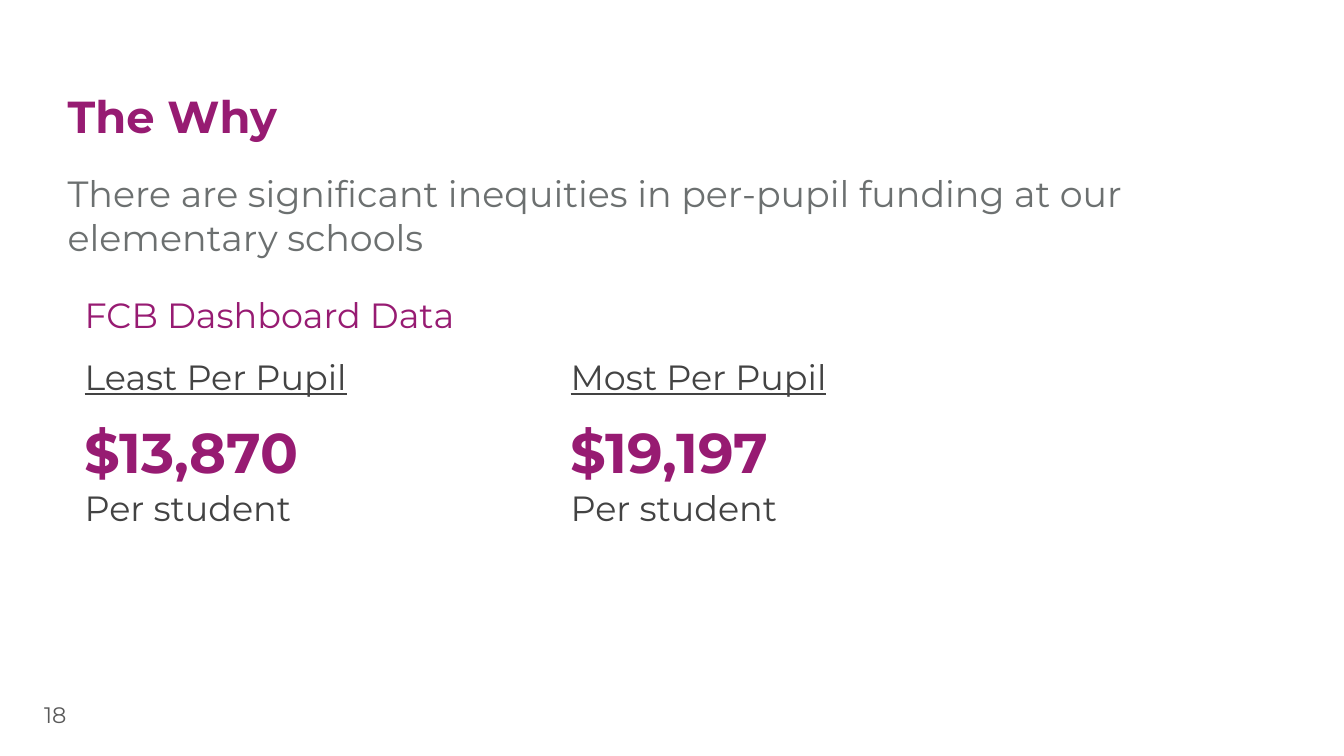
from pptx import Presentation
from pptx import util as u
from pptx.dml import color
from pptx.enum import text
from pptx.oxml import xmlchemy


PLUM = "971B72"
GREY = "6C7070"
CHARCOAL = "434343"
NUMBER_GREY = "595959"


def paint(value):
    return color.RGBColor.from_string(value)


class SlideBuilder:
    font = "Montserrat"
    inset = u.Inches(0.1)

    def __init__(self, deck):
        self.deck = deck
        self.page = deck.slides.add_slide(deck.slide_layouts[1])
        self.page.background.fill.solid()
        self.page.background.fill.fore_color.rgb = paint("FFFFFF")

    def across(self, percent):
        return round(self.deck.slide_width * percent / 100)

    def down(self, percent):
        return round(self.deck.slide_height * percent / 100)

    def area(self, left, top, width, height):
        return self.across(left), self.down(top), self.across(width), self.down(height)

    def add_words(self, para, words, size, tint, bold=False, underline=False):
        para.alignment = text.PP_ALIGN.LEFT
        para.line_spacing = 1.0
        para.space_before = u.Pt(0)
        span = para.add_run()
        span.text = words
        span.font.name = self.font
        span.font.size = u.Pt(size)
        span.font.bold = bold
        span.font.underline = underline
        span.font.color.rgb = paint(tint)

    def frame(self, box, anchor=text.MSO_ANCHOR.TOP):
        frame = box.text_frame
        frame.word_wrap = True
        frame.auto_size = text.MSO_AUTO_SIZE.NONE
        frame.vertical_anchor = anchor
        frame.margin_left = frame.margin_right = self.inset
        frame.margin_top = frame.margin_bottom = self.inset
        return frame

    def placeholder(self, index, place, words, size, tint, bold=False):
        box = self.page.placeholders[index]
        box.left, box.top, box.width, box.height = self.area(*place)
        para = self.frame(box).paragraphs[0]
        properties = para._p.get_or_add_pPr()
        properties.set("marL", "0")
        properties.set("indent", "0")
        properties.append(xmlchemy.OxmlElement("a:buNone"))
        self.add_words(para, words, size, tint, bold)

    def label(self, place, words, size, tint):
        box = self.page.shapes.add_textbox(*self.area(*place))
        frame = self.frame(box, text.MSO_ANCHOR.MIDDLE)
        self.add_words(frame.paragraphs[0], words, size, tint)

    def table(self, left, top, widths, heights, rows):
        place = self.area(left, top, sum(widths), sum(heights))
        table = self.page.shapes.add_table(len(heights), len(widths), *place).table
        table.first_row = table.horz_banding = False
        for column, width in zip(table.columns, widths):
            column.width = self.across(width)
        for row, height in zip(table.rows, heights):
            row.height = self.down(height)
        for row, contents in zip(table.rows, rows):
            for cell, lines in zip(row.cells, contents):
                self.fill_cell(cell, lines)

    def fill_cell(self, cell, lines):
        cell.fill.background()
        cell.margin_left = cell.margin_right = self.inset
        cell.margin_top = cell.margin_bottom = self.inset
        for number, line in enumerate(lines):
            frame = cell.text_frame
            para = frame.add_paragraph() if number else frame.paragraphs[0]
            self.add_words(para, *line)


def main():
    deck = Presentation()
    deck.slide_width = u.Inches(13.33)
    deck.slide_height = u.Inches(7.5)
    slide = SlideBuilder(deck)

    slide.placeholder(0, (4.28, 10.4, 80.4, 16.4), "The Why", 32, PLUM, True)
    slide.placeholder(
        1, (4.28, 21.3, 89.1, 59),
        "There are significant inequities in per-pupil funding at our elementary schools",
        26, GREY,
    )
    slide.label((2.55, 90.7, 6, 7.6), "18", 16, NUMBER_GREY)

    funding = {"Least Per Pupil": "$13,870", "Most Per Pupil": "$19,197"}
    headings = [[(name, 25, CHARCOAL, False, True)] for name in funding]
    amounts = [
        [(amount, 40, PLUM, True), ("Per student", 25, CHARCOAL)]
        for amount in funding.values()
    ]
    source = [[("FCB Dashboard Data", 25, PLUM)], []]
    slide.table(5.55, 37.6, (36.16, 43.51), (8.3, 8.3, 17.1), (source, headings, amounts))

    deck.save("out.pptx")


if __name__ == "__main__":
    main()
